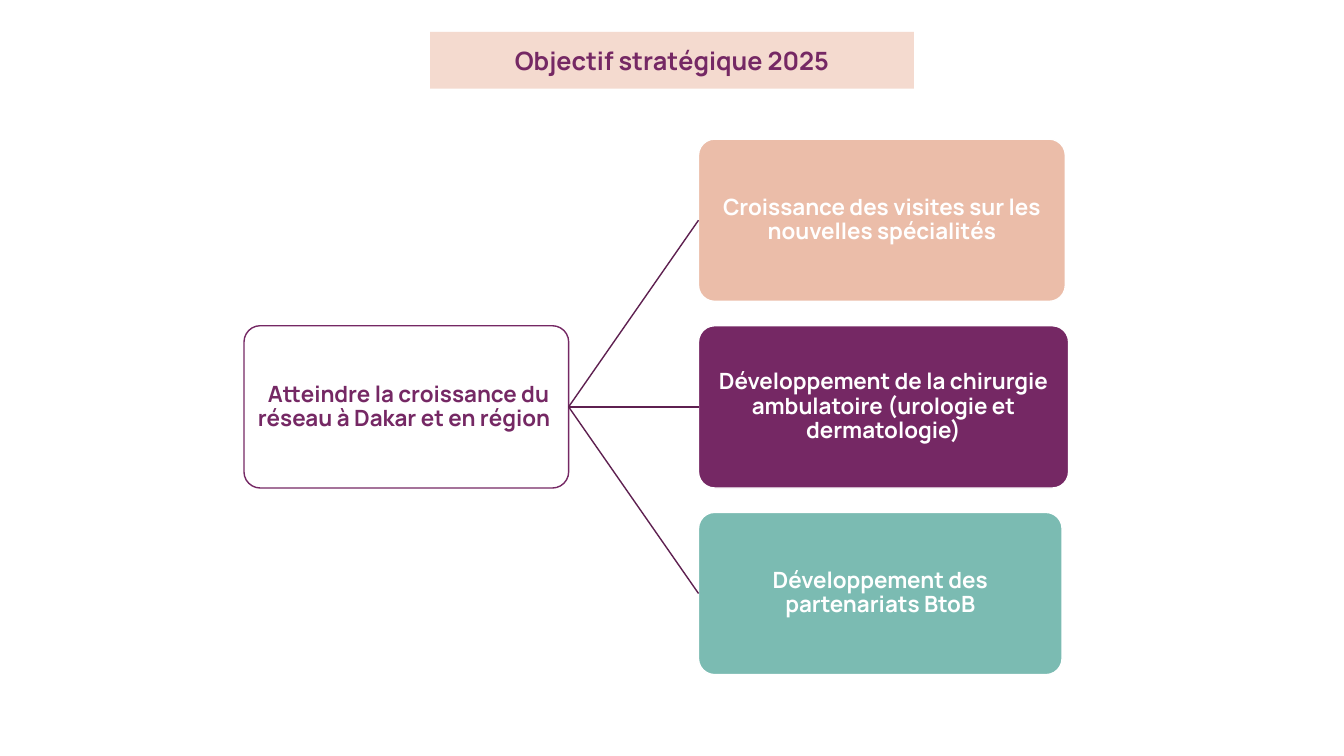
from lxml.etree import SubElement
from pptx import Presentation
from pptx.dml.color import RGBColor
from pptx.enum.shapes import MSO_CONNECTOR as Connector, MSO_SHAPE as Preset
from pptx.enum.text import MSO_ANCHOR as Anchor, MSO_AUTO_SIZE as AutoSize, PP_ALIGN as Align
from pptx.oxml.ns import qn
from pptx.util import Inches, Pt

WHITE = RGBColor(0xFF, 0xFF, 0xFF)
PLUM = RGBColor(0x75, 0x28, 0x64)
DARK_PLUM = RGBColor(0x5E, 0x20, 0x50)
PEACH = RGBColor(0xEB, 0xBD, 0xA9)
TEAL = RGBColor(0x7B, 0xBB, 0xB2)

GOALS = [
    ("Croissance des visites sur les nouvelles spécialités", PEACH, 1.13),
    ("Développement de la chirurgie ambulatoire (urologie et dermatologie)", PLUM, 1.14),
    ("Développement des partenariats BtoB", TEAL, 1.12),
]


class ObjectiveTree:
    FONT = "Manrope"
    LEFT, TOP = Inches(2.42), Inches(1.38)
    COLUMN, ROW = Inches(3.22), Inches(1.61)
    GOAL_COLUMN, ROW_STEP = 1.4, 1.15

    def __init__(self, deck):
        self.slide_width = deck.slide_width
        self.page = deck.slides.add_slide(deck.slide_layouts[5])

    def place(self, column, row, width, height):
        return (
            int(self.LEFT + column * self.COLUMN),
            int(self.TOP + row * self.ROW),
            int(width * self.COLUMN),
            int(height * self.ROW),
        )

    def label(self, shape, text, size, color, margin, spacing):
        frame = shape.text_frame
        frame.word_wrap = True
        frame.auto_size = AutoSize.NONE
        frame.vertical_anchor = Anchor.MIDDLE
        frame.margin_left = frame.margin_right = Inches(margin)
        frame.margin_top = frame.margin_bottom = Inches(margin)
        para = frame.paragraphs[0]
        para.alignment = Align.CENTER
        para.line_spacing = spacing
        span = para.add_run()
        span.text = text
        span.font.name = self.FONT
        span.font.size = Pt(size)
        span.font.bold = True
        span.font.color.rgb = color

    def title(self, text, row, width, height):
        pill = self.page.shapes.title
        _, pill.top, pill.width, pill.height = self.place(0, row, width, height)
        pill.left = (self.slide_width - pill.width) // 2
        properties = pill.element.spPr
        geometry = SubElement(properties, qn("a:prstGeom"), prst="roundRect")
        guides = SubElement(geometry, qn("a:avLst"))
        SubElement(guides, qn("a:gd"), name="adj", fmla="val 50000")
        pill.fill.solid()
        pill.fill.fore_color.rgb = PEACH
        tint = properties.find(".//" + qn("a:srgbClr"))
        SubElement(tint, qn("a:alpha"), val="55000")
        self.label(pill, text, 18, PLUM, 0.1, 1.0)

    def box(self, text, column, row, width, fill, line, color):
        box = self.page.shapes.add_shape(
            Preset.ROUNDED_RECTANGLE, *self.place(column, row, width, 1)
        )
        box.adjustments[0] = 0.1
        box.shadow.inherit = False
        box.fill.solid()
        box.fill.fore_color.rgb = fill
        box.line.color.rgb = line
        box.line.width = Pt(1)
        self.label(box, text, 16, color, 0.06, 0.9)
        return box

    def branch(self, root, goal):
        branch = self.page.shapes.add_connector(Connector.STRAIGHT, 0, 0, 0, 0)
        branch.begin_connect(root, 3)
        branch.end_connect(goal, 1)
        branch.line.color.rgb = DARK_PLUM
        branch.line.width = Pt(1)
        SubElement(branch.element.spPr, qn("a:effectLst"))


def main():
    deck = Presentation()
    deck.slide_width, deck.slide_height = Inches(13.33), Inches(7.5)
    tree = ObjectiveTree(deck)
    tree.title("Objectif stratégique 2025", -0.66, 1.49, 0.35)
    root = tree.box(
        " Atteindre la croissance du réseau à Dakar et en région ",
        0, tree.ROW_STEP, 1, WHITE, PLUM, PLUM,
    )
    for index, (text, fill, width) in enumerate(GOALS):
        goal = tree.box(
            text, tree.GOAL_COLUMN, index * tree.ROW_STEP, width, fill, WHITE, WHITE
        )
        tree.branch(root, goal)
    deck.save("out.pptx")


if __name__ == "__main__":
    main()
